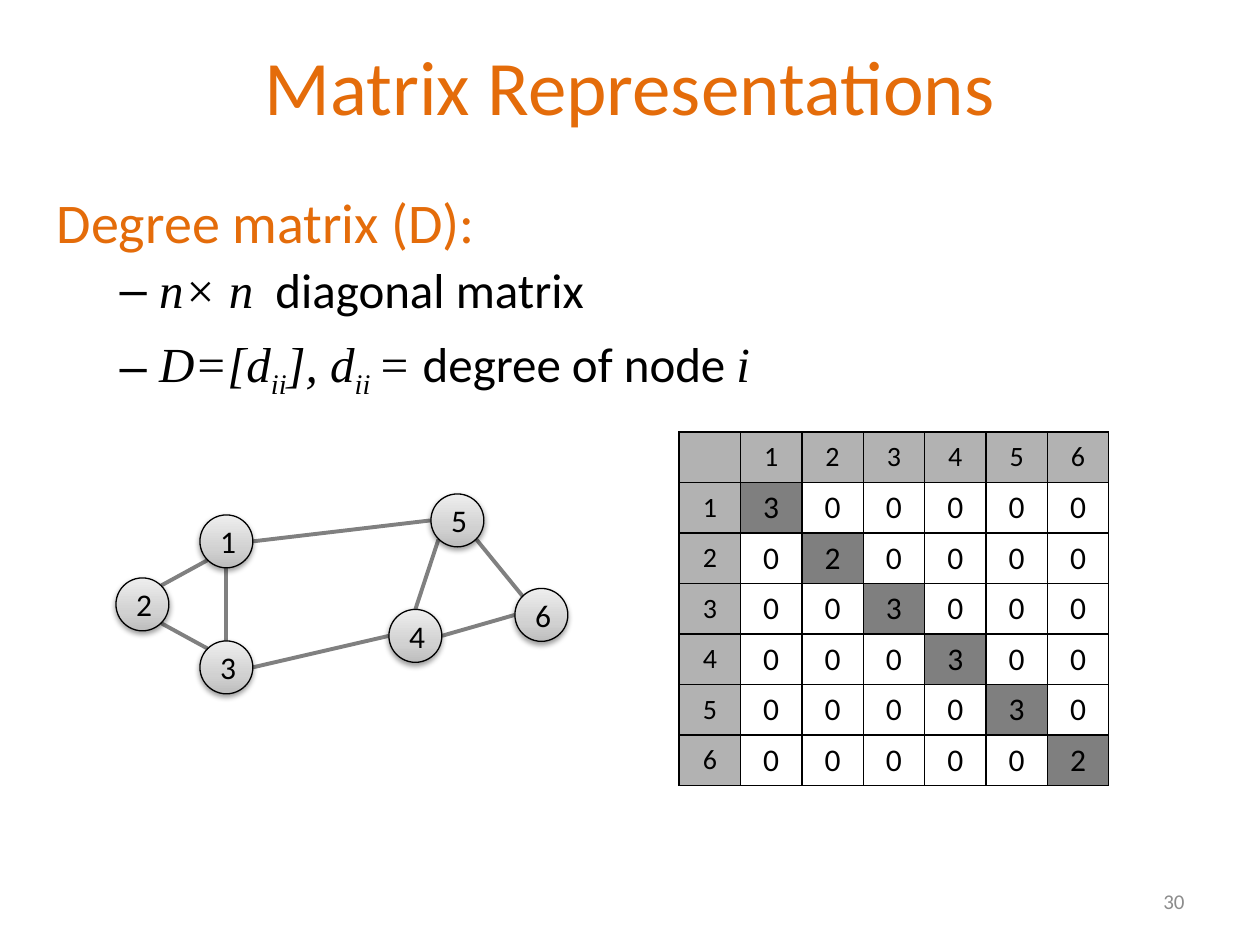
from copy import deepcopy

from lxml import etree
from pptx import Presentation
from pptx import util as u
from pptx.dml.color import RGBColor
from pptx.enum import shapes, text
from pptx.oxml import parse_xml
from pptx.oxml.ns import nsdecls, qn

COLORS = {
    "accent": "E46C0A", "ink": "000000", "muted": "8C8C8C", "edge": "808080",
    "header": "B2B2B2", "dark": "BDBDBD", "middle": "D1D1D1", "light": "EEEEEE",
}
SANS, SERIF = "Calibri", "Times New Roman"

# Node centres in steps from the graph's first centre.
STEP, DIAMETER = 1 / 6, 0.42
NODES = {1: (4, 1), 3: (4, 7), 2: (0, 4), 5: (15, 0), 4: (13, 5.5), 6: (19, 4.5)}
DIAGONAL = 0.71
SIDES = {
    "top": (0, -1), "bottom": (0, 1), "left": (-1, 0), "right": (1, 0),
    "top left": (-DIAGONAL, -DIAGONAL), "top right": (DIAGONAL, -DIAGONAL),
    "bottom left": (-DIAGONAL, DIAGONAL), "bottom right": (DIAGONAL, DIAGONAL),
}
EDGES = [
    (1, "bottom left", 2, "top right"), (2, "bottom right", 3, "top left"),
    (1, "bottom", 3, "top"), (1, "right", 5, "left"),
    (3, "right", 4, "left"), (5, "bottom right", 6, "top left"),
    (4, "right", 6, "left"), (5, "bottom left", 4, "top"),
]
DEGREES = [3, 2, 3, 3, 3, 2]


def rgb(name):
    return RGBColor.from_string(COLORS[name])


def add_text(para, words, size=18, font=SANS, color="ink", italic=False, baseline=0):
    span = para.add_run()
    span.text = words
    span.font.size = u.Pt(size)
    span.font.name = font
    span.font.italic = italic
    span.font.color.rgb = rgb(color)
    if baseline:
        span.font._element.set("baseline", str(baseline * 1000))


def place(shape, box):
    shape.left, shape.top, shape.width, shape.height = map(u.Inches, box)


def fill_title(page, box):
    title = page.shapes.title
    place(title, box)
    title.text_frame.vertical_anchor = text.MSO_ANCHOR.MIDDLE
    para = title.text_frame.paragraphs[0]
    para.alignment = text.PP_ALIGN.CENTER
    add_text(para, "Matrix Representations", size=44, color="accent")


def fill_body(page, box):
    body = page.placeholders[1]
    place(body, box)
    frame = body.text_frame
    frame.auto_size = text.MSO_AUTO_SIZE.NONE

    heading = frame.paragraphs[0]
    heading.space_before = u.Pt(6.4)
    properties = heading._p.get_or_add_pPr()
    properties.set("marL", "0")
    properties.set("indent", "0")
    etree.SubElement(properties, qn("a:buNone"))
    add_text(heading, "Degree matrix (D):", size=32, color="accent")

    math = {"font": SERIF, "italic": True}
    index = {**math, "baseline": -25}
    bullets = [
        (2.8, [("n× n", math), ("  diagonal matrix", {})]),
        (8.4, [("D=[d", math), ("ii", index), ("], d", math), ("ii ", index),
               ("= ", math), ("degree of node ", {}), ("i", math)]),
    ]
    for space, spans in bullets:
        para = frame.add_paragraph()
        para.level = 1
        para.space_before = u.Pt(space)
        for words, style in spans:
            add_text(para, words, size=28, **style)


def add_page_number(page, box):
    frame = page.shapes.add_textbox(*map(u.Inches, box)).text_frame
    frame.word_wrap = True
    frame.vertical_anchor = text.MSO_ANCHOR.MIDDLE
    para = frame.paragraphs[0]
    para.alignment = text.PP_ALIGN.RIGHT
    add_text(para, "30", size=12, color="muted")


def shade_node(node):
    """Give a node its upward gradient and soft drop shadow."""
    node.fill.gradient()
    node.fill.gradient_angle = 90
    for stop, name in zip(node.fill.gradient_stops, ("dark", "light")):
        stop.color.rgb = rgb(name)
    stops = next(node._element.iter(qn("a:gsLst")))
    middle = deepcopy(stops[0])
    middle.set("pos", "35000")
    middle[0].set("val", COLORS["middle"])
    stops.insert(1, middle)

    node.shadow.inherit = False
    effects = node._element.spPr.find(qn("a:effectLst"))
    effects.append(parse_xml(
        f'<a:outerShdw {nsdecls("a")} blurRad="40000" dist="20000" dir="5400000" '
        f'rotWithShape="0"><a:srgbClr val="{COLORS["ink"]}">'
        '<a:alpha val="38000"/></a:srgbClr></a:outerShdw>'))


def add_graph(page, left, top):
    graph = page.shapes.add_group_shape()
    radius = DIAMETER / 2
    centers = {label: (left + radius + column * STEP, top + radius + row * STEP)
               for label, (column, row) in NODES.items()}

    def anchor(label, side):
        return [u.Inches(center + radius * shift)
                for center, shift in zip(centers[label], SIDES[side])]

    for start, start_side, end, end_side in EDGES:
        edge = graph.shapes.add_connector(
            shapes.MSO_CONNECTOR.STRAIGHT, *anchor(start, start_side), *anchor(end, end_side))
        edge.line.color.rgb = rgb("edge")
        edge.line.width = u.Pt(2.25)
        etree.SubElement(edge._element.spPr, qn("a:effectLst"))

    for label, (x, y) in centers.items():
        node = graph.shapes.add_shape(
            shapes.MSO_SHAPE.OVAL,
            *map(u.Inches, (x - radius, y - radius, DIAMETER, DIAMETER)))
        shade_node(node)
        node.line.color.rgb = rgb("ink")
        node.line.width = u.Pt(0.75)
        node.text_frame.vertical_anchor = text.MSO_ANCHOR.MIDDLE
        para = node.text_frame.paragraphs[0]
        para.alignment = text.PP_ALIGN.CENTER
        add_text(para, str(label))


def outline_cell(cell):
    properties = cell._tc.get_or_add_tcPr()
    for side in "LRTB":
        properties.append(parse_xml(
            f'<a:ln{side} {nsdecls("a")} w="12700"><a:solidFill>'
            f'<a:srgbClr val="{COLORS["ink"]}"/></a:solidFill></a:ln{side}>'))


def fill_cell(cell, row, column):
    if row == 0 or column == 0:
        cell.fill.solid()
        cell.fill.fore_color.rgb = rgb("header")
    elif row == column:
        cell.fill.solid()
        cell.fill.fore_color.rgb = rgb("ink")
        color = cell._tc.tcPr.find(qn("a:solidFill"))[0]
        etree.SubElement(color, qn("a:alpha")).set("val", "50000")
    else:
        cell.fill.background()


def add_degree_matrix(page, box):
    count = len(DEGREES) + 1
    table = page.shapes.add_table(count, count, *map(u.Inches, box)).table
    table.first_row = table.horz_banding = False
    for row in range(count):
        for column in range(count):
            cell = table.cell(row, column)
            is_header = row == 0 or column == 0
            if is_header:
                words = str(row + column or "")
            else:
                words = str(DEGREES[row - 1] if row == column else 0)
            outline_cell(cell)
            fill_cell(cell, row, column)
            cell.margin_left = cell.margin_right = u.Inches(0.08 if is_header else 0.1)
            cell.vertical_anchor = text.MSO_ANCHOR.MIDDLE
            para = cell.text_frame.paragraphs[0]
            para.alignment = text.PP_ALIGN.CENTER
            add_text(para, words, size=16 if is_header else 18)


def main():
    deck = Presentation()
    deck.slide_width, deck.slide_height = u.Inches(10), u.Inches(7.5)
    page = deck.slides.add_slide(deck.slide_layouts[1])
    fill_title(page, (0.5, 0.12, 9, 1.1))
    fill_body(page, (0.35, 1.44, 8.83, 2.94))
    add_page_number(page, (7.17, 6.95, 2.33, 0.4))
    add_graph(page, 0.92, 3.92)
    add_degree_matrix(page, (5.39, 3.43, 3.41, 2.73))
    deck.save("out.pptx")


if __name__ == "__main__":
    main()
